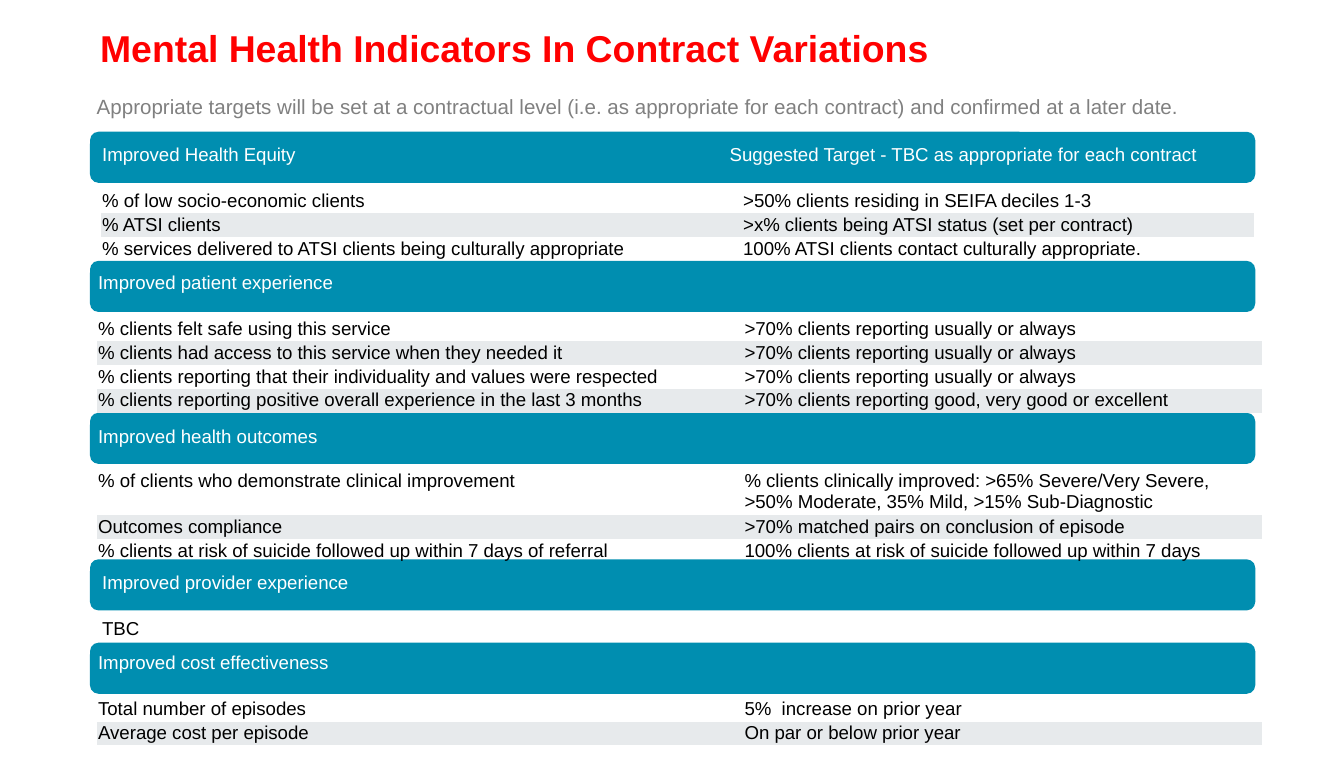
from dataclasses import dataclass

from pptx import Presentation
from pptx.dml.color import RGBColor
from pptx.enum.shapes import MSO_SHAPE as Shape
from pptx.enum.text import MSO_ANCHOR as Anchor, PP_ALIGN as Align
from pptx.util import Inches, Pt

TEAL, STRIPE, WHITE, BLACK = "008EB0", "E7EAEC", "FFFFFF", "000000"
RED, GREY = "FF0000", "808080"
NO_STYLE = "{2D5ABB26-0587-4C30-8999-92F81FD0307C}"
ROW_HEIGHT = 0.17
USUALLY = ">70% clients reporting usually or always"


@dataclass
class Section:
    heading: str
    bar_top: float
    rows: list[tuple[str, str]]
    target_heading: str = ""
    height: float = 0.52
    bottom_margin: float = 0


@dataclass
class IndicatorTable:
    left: float
    top: float
    widths: tuple[float, float]
    sections: list[Section]


NARROW = (4.67, 3.91)
WIDE = (4.71, 3.96)

TABLES = [
    IndicatorTable(0.75, 0.89, NARROW, [
        Section("Improved Health Equity", 0.98, [
            ("% of low socio-economic clients", ">50% clients residing in SEIFA deciles 1-3"),
            ("% ATSI clients", ">x% clients being ATSI status (set per contract)"),
            ("% services delivered to ATSI clients being culturally appropriate",
             "100% ATSI clients contact culturally appropriate."),
        ], "Suggested Target - TBC as appropriate for each contract"),
    ]),
    IndicatorTable(0.72, 1.84, WIDE, [
        Section("Improved patient experience", 1.94, [
            ("% clients felt safe using this service", USUALLY),
            ("% clients had access to this service when they needed it", USUALLY),
            ("% clients reporting that their individuality and values were respected", USUALLY),
            ("% clients reporting positive overall experience in the last 3 months",
             ">70% clients reporting good, very good or excellent"),
        ]),
        Section("Improved health outcomes", 3.07, [
            ("% of clients who demonstrate clinical improvement",
             "% clients clinically improved: >65% Severe/Very Severe, "
             ">50% Moderate, 35% Mild, >15% Sub-Diagnostic"),
            ("Outcomes compliance", ">70% matched pairs on conclusion of episode"),
            ("% clients at risk of suicide followed up within 7 days of referral",
             "100% clients at risk of suicide followed up within 7 days"),
        ], height=0.42, bottom_margin=0.07),
    ]),
    IndicatorTable(0.75, 4.07, NARROW, [
        Section("Improved provider experience", 4.16, [("TBC", "")]),
    ]),
    IndicatorTable(0.72, 4.67, WIDE, [
        Section("Improved cost effectiveness", 4.78, [
            ("Total number of episodes", "5%  increase on prior year"),
            ("Average cost per episode", "On par or below prior year"),
        ]),
    ]),
]


def rgb(value: str) -> RGBColor:
    return RGBColor.from_string(value)


def write(paragraph, text: str, size: float, color: str, bold: bool = False) -> None:
    if not text:
        # An empty cell keeps the row low only if its end mark is small too.
        paragraph._p.get_or_add_endParaRPr().set("sz", str(int(size * 100)))
        return
    run = paragraph.add_run()
    run.text = text
    for name, value in {"name": "Arial", "size": Pt(size), "bold": bold}.items():
        setattr(run.font, name, value)
    run.font.color.rgb = rgb(color)


def set_margins(target, bottom: float = 0, side: float = 0) -> None:
    margins = {"margin_left": side, "margin_right": side,
               "margin_top": 0.01, "margin_bottom": bottom}
    for name, value in margins.items():
        setattr(target, name, Inches(value))


def add_text(slide, box: tuple[float, float, float, float], text: str, size: float,
             color: str, bold: bool = False, align: Align = Align.LEFT) -> None:
    frame = slide.shapes.add_textbox(*map(Inches, box)).text_frame
    frame.word_wrap = True
    set_margins(frame)
    frame.paragraphs[0].alignment = align
    write(frame.paragraphs[0], text, size, color, bold)


def add_bar(slide, top: float) -> None:
    bar = slide.shapes.add_shape(Shape.ROUNDED_RECTANGLE, Inches(0.67), Inches(top),
                                 Inches(8.67), Inches(0.38))
    bar.shadow.inherit = False
    bar.fill.solid()
    bar.fill.fore_color.rgb = rgb(TEAL)
    bar.line.fill.background()


def fill_cell(cell, text: str, color: str, anchor: Anchor, bottom: float = 0,
              indent: float = 0, striped: bool = False) -> None:
    set_margins(cell, bottom, side=0.01)
    cell.vertical_anchor = anchor
    if striped:
        cell.fill.solid()
        cell.fill.fore_color.rgb = rgb(STRIPE)
    else:
        cell.fill.background()
    paragraph = cell.text_frame.paragraphs[0]
    if indent:
        paragraph._p.get_or_add_pPr().set("marL", str(Inches(indent)))
    write(paragraph, text, 10, color)


def add_indicator_table(slide, item: IndicatorTable) -> None:
    heights = [height for section in item.sections
               for height in [section.height] + [ROW_HEIGHT] * len(section.rows)]
    table = slide.shapes.add_table(
        len(heights), 2, Inches(item.left), Inches(item.top),
        Inches(sum(item.widths)), Inches(sum(heights))).table
    table.first_row = table.horz_banding = False
    table._tbl.tblPr.find("{*}tableStyleId").text = NO_STYLE
    for column, width in zip(table.columns, item.widths):
        column.width = Inches(width)
    for row, height in zip(table.rows, heights):
        row.height = Inches(height)

    rows = iter(table.rows)
    for section in item.sections:
        headings = (section.heading, section.target_heading)
        for cell, text in zip(next(rows).cells, headings):
            fill_cell(cell, text, WHITE, Anchor.MIDDLE, section.bottom_margin)
        for index, texts in enumerate(section.rows):
            for cell, text, indent in zip(next(rows).cells, texts, (0, 0.1)):
                fill_cell(cell, text, BLACK, Anchor.TOP, indent=indent,
                          striped=index % 2 == 1)


def main() -> None:
    presentation = Presentation()
    presentation.slide_width, presentation.slide_height = Inches(10), Inches(5.63)
    slide = presentation.slides.add_slide(presentation.slide_layouts[6])
    add_text(slide, (0.52, 0.18, 6.62, 0.35), "Mental Health Indicators In Contract Variations",
             20, RED, True, Align.CENTER)
    add_text(slide, (0.72, 0.69, 8.9, 0.2),
             "Appropriate targets will be set at a contractual level (i.e. as appropriate "
             "for each contract) and confirmed at a later date.", 11, GREY)
    for item in TABLES:
        for section in item.sections:
            add_bar(slide, section.bar_top)
    for item in TABLES:
        add_indicator_table(slide, item)
    presentation.save("out.pptx")


if __name__ == "__main__":
    main()
